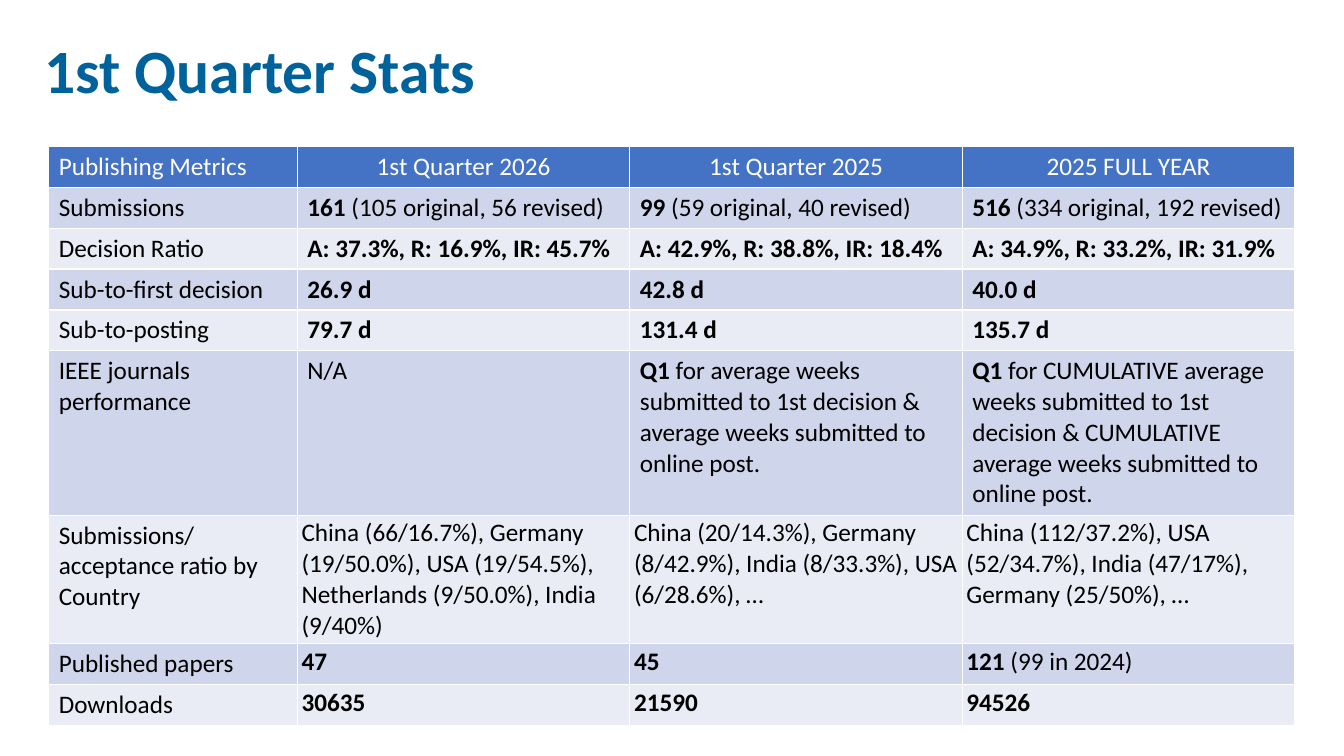
from pptx import Presentation
from pptx.dml.color import RGBColor
from pptx.enum.text import MSO_ANCHOR, MSO_AUTO_SIZE, PP_ALIGN
from pptx.util import Pt

TITLE = "1st Quarter Stats"
HEADINGS = ["Publishing Metrics", "1st Quarter 2026", "1st Quarter 2025", "2025 FULL YEAR"]

# Metric, then a (bold part, plain part) pair for each period
METRICS = [
    ("Submissions", ("161", " (105 original, 56 revised)"),
     ("99", " (59 original, 40 revised)"), ("516", " (334 original, 192 revised)")),
    ("Decision Ratio", ("A: 37.3%, R: 16.9%, IR: 45.7%", ""),
     ("A: 42.9%, R: 38.8%, IR: 18.4%", ""), ("A: 34.9%, R: 33.2%, IR: 31.9%", "")),
    ("Sub-to-first decision", ("26.9 d", ""), ("42.8 d", ""), ("40.0 d", "")),
    ("Sub-to-posting", ("79.7 d", ""), ("131.4 d", ""), ("135.7 d", "")),
    ("IEEE journals performance", ("", "N/A"),
     ("Q1", " for average weeks submitted to 1st decision & average weeks "
            "submitted to online post."),
     ("Q1", " for CUMULATIVE average weeks submitted to 1st decision & "
            "CUMULATIVE average weeks submitted to online post.")),
    ("Submissions/acceptance ratio by Country",
     ("", "China (66/16.7%), Germany (19/50.0%), USA (19/54.5%), "
          "Netherlands (9/50.0%), India (9/40%)"),
     ("", "China (20/14.3%), Germany (8/42.9%), India (8/33.3%), USA (6/28.6%), …"),
     ("", "China (112/37.2%), USA (52/34.7%), India (47/17%), Germany (25/50%), …")),
    ("Published papers", ("47", ""), ("45", ""), ("121", " (99 in 2024)")),
    ("Downloads", ("30635", ""), ("21590", ""), ("94526", "")),
]

FONT = "Calibri"
TITLE_BLUE, HEADING_BLUE = "00629B", "4472C4"
BANDS = ["CFD5EA", "E9EBF5"]
COLUMN_WIDTHS = [177.6, 237.5, 237.5, 237.5]
ROW_HEIGHT = 29.2
TALL_ROWS = {5: 117.4, 6: 91.5}
FIRST_TIGHT_ROW = 6


def color(hex_string):
    return RGBColor.from_string(hex_string)


def add_text(paragraph, text, size=18, ink="000000", bold=False):
    run = paragraph.add_run()
    run.text = text
    run.font.name = FONT
    run.font.size = Pt(size)
    run.font.bold = bold
    run.font.color.rgb = color(ink)


def fill_cell(cell, fill):
    cell.fill.solid()
    cell.fill.fore_color.rgb = color(fill)
    return cell.text_frame.paragraphs[0]


def add_title(slide):
    title = slide.shapes.title
    title.left, title.top, title.width, title.height = Pt(24.5), Pt(0), Pt(828), Pt(104.4)
    frame = title.text_frame
    frame.word_wrap = True
    frame.auto_size = MSO_AUTO_SIZE.NONE
    frame.vertical_anchor = MSO_ANCHOR.MIDDLE
    paragraph = frame.paragraphs[0]
    paragraph.alignment = PP_ALIGN.LEFT
    paragraph.line_spacing = 0.9
    add_text(paragraph, TITLE, size=44, ink=TITLE_BLUE, bold=True)


def add_metrics(slide):
    heights = [TALL_ROWS.get(row, ROW_HEIGHT) for row in range(len(METRICS) + 1)]
    table = slide.shapes.add_table(
        len(heights), len(HEADINGS), Pt(34.8), Pt(104.6),
        Pt(sum(COLUMN_WIDTHS)), Pt(sum(heights))).table
    for column, width in zip(table.columns, COLUMN_WIDTHS):
        column.width = Pt(width)
    for row, height in zip(table.rows, heights):
        row.height = Pt(height)

    for column, heading in enumerate(HEADINGS):
        paragraph = fill_cell(table.cell(0, column), HEADING_BLUE)
        paragraph.alignment = PP_ALIGN.CENTER if column else PP_ALIGN.LEFT
        add_text(paragraph, heading, ink="FFFFFF")

    for row, (metric, *periods) in enumerate(METRICS, start=1):
        band = BANDS[(row - 1) % 2]
        add_text(fill_cell(table.cell(row, 0), band), metric)
        for column, (figure, detail) in enumerate(periods, start=1):
            cell = table.cell(row, column)
            paragraph = fill_cell(cell, band)
            if row >= FIRST_TIGHT_ROW:
                cell.margin_left = cell.margin_right = Pt(3)
                cell.margin_top = cell.margin_bottom = Pt(2)
            if figure:
                add_text(paragraph, figure, bold=True)
            if detail:
                add_text(paragraph, detail)


def main():
    presentation = Presentation()
    presentation.slide_width, presentation.slide_height = Pt(960), Pt(540)
    slide = presentation.slides.add_slide(presentation.slide_layouts[5])
    add_title(slide)
    add_metrics(slide)
    presentation.save("out.pptx")


if __name__ == "__main__":
    main()
